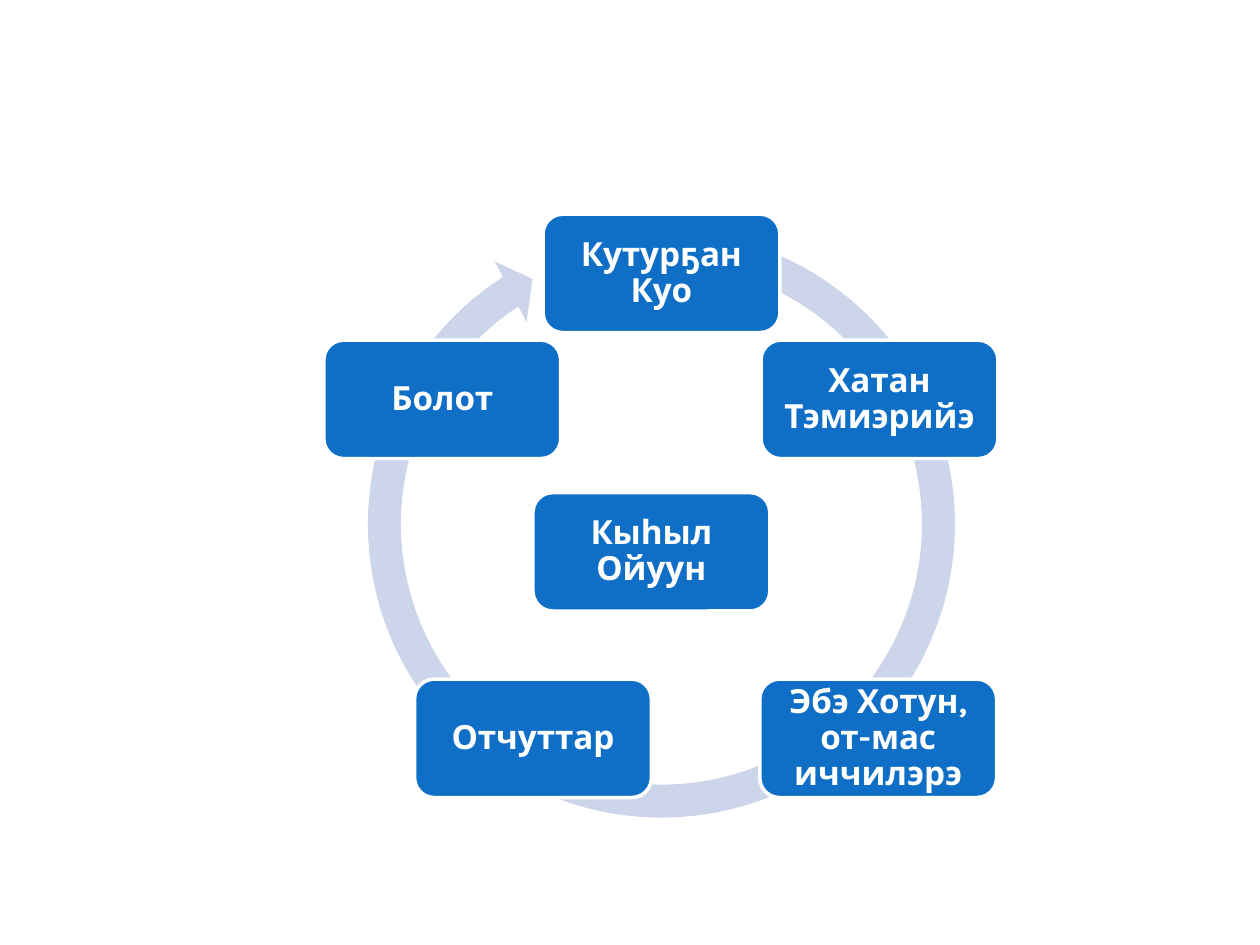
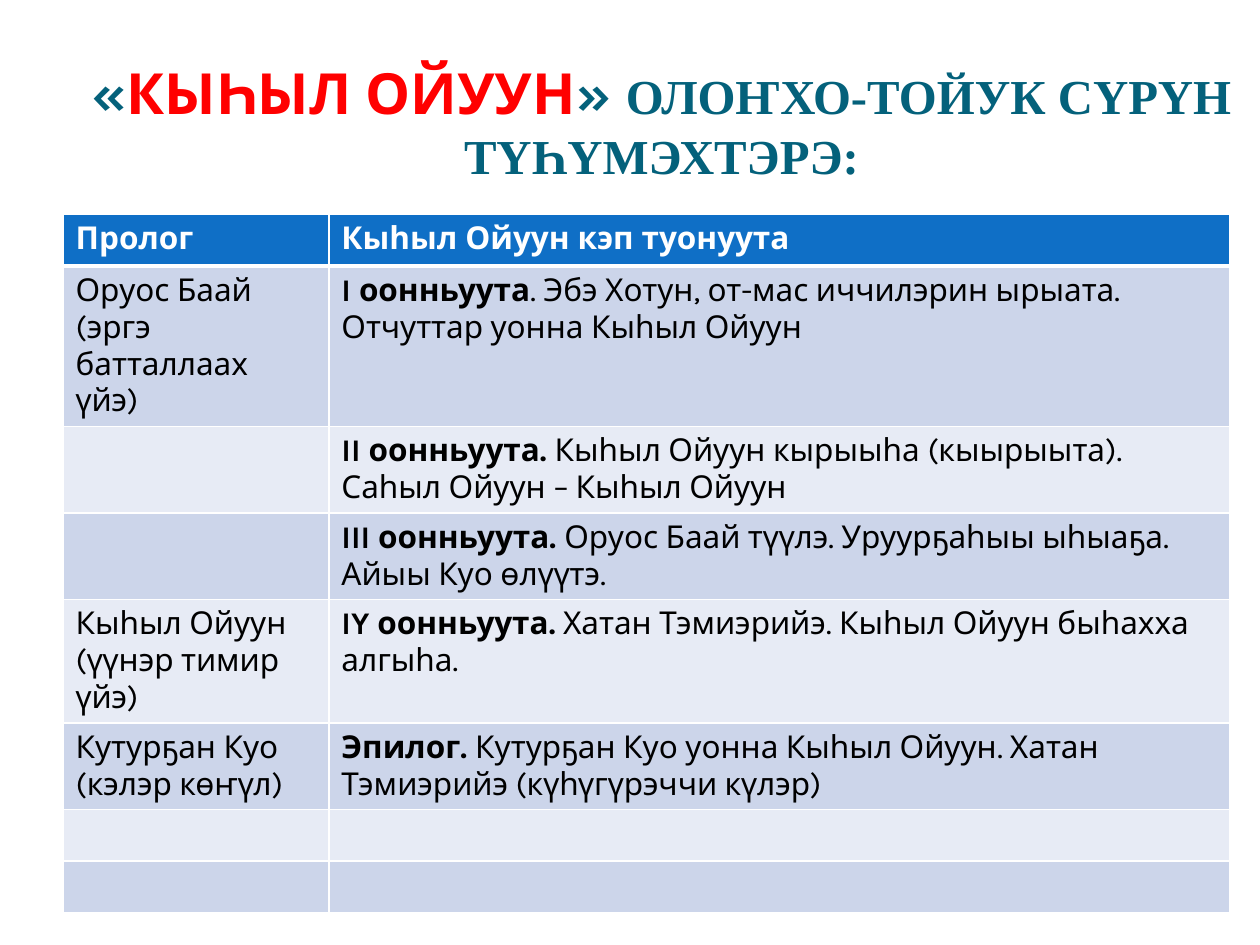
from pptx import Presentation
from pptx.dml.color import RGBColor
from pptx.enum.shapes import MSO_SHAPE
from pptx.enum.text import MSO_ANCHOR, MSO_AUTO_SIZE, PP_ALIGN
from pptx.oxml.xmlchemy import OxmlElement
from pptx.util import Inches, Pt

BLUE, PALE, LIGHT = "0F6FC6", "CCD5EA", "E7EBF5"
WHITE, BLACK, TEAL, RED = "FFFFFF", "000000", "04617B", "FF0000"

BOX_SIZE = (1.88, 0.94)
CHARACTERS = [
    ("Кутурҕан Куо", 4.31, 1.7),
    ("Хатан Тэмиэрийэ", 6.04, 2.7),
    ("Эбэ Хотун, от-мас иччилэрэ", 6.03, 5.39),
    ("Отчуттар", 3.29, 5.39),
    ("Кыһыл Ойуун", 4.23, 3.91),
    ("Болот", 2.57, 2.7),
]

COLUMN_WIDTHS = (2.11, 7.15)
ROW_HEIGHT = 0.41
ACTS = [
    (["Пролог"], "Кыһыл Ойуун кэп туонуута", ""),
    (["Оруос Баай (эргэ батталлаах үйэ)"], "I оонньуута",
     ". Эбэ Хотун, от-мас иччилэрин ырыата. Отчуттар уонна Кыһыл Ойуун"),
    ([], "II оонньуута. ",
     "Кыһыл Ойуун кырыыһа (кыырыыта). Саһыл Ойуун – Кыһыл Ойуун"),
    ([], "III оонньуута. ",
     "Оруос Баай түүлэ. Уруурҕаһыы ыһыаҕа. Айыы Куо өлүүтэ."),
    (["Кыһыл Ойуун (үүнэр тимир үйэ)"], "IY оонньуута.",
     " Хатан Тэмиэрийэ. Кыһыл Ойуун быһахха алгыһа."),
    (["Кутурҕан Куо", "(кэлэр көҥүл)"], "Эпилог. ",
     "Кутурҕан Куо уонна Кыһыл Ойуун. Хатан Тэмиэрийэ (күһүгүрэччи күлэр)"),
    ([], "", ""),
    ([], "", ""),
]


def color(value):
    return RGBColor.from_string(value)


def paint(target, value):
    target.fill.solid()
    target.fill.fore_color.rgb = color(value)


def add_span(para, text, size, value, bold=True, name="Karla"):
    span = para.add_run()
    span.text = text
    span.font.color.rgb = color(value)
    for attribute, setting in {"size": Pt(size), "bold": bold, "name": name}.items():
        setattr(span.font, attribute, setting)


def add_cycle_arrow(page):
    arrow = page.shapes.add_shape(
        MSO_SHAPE.CIRCULAR_ARROW, *map(Inches, (2.78, 1.69, 4.94, 4.94)))
    for index, value in enumerate((0.053, 3.126, 142.224, 171.304, 0.055)):
        arrow.adjustments[index] = value
    arrow.shadow.inherit = False
    paint(arrow, PALE)
    arrow.line.fill.background()


def add_character(page, text, left, top):
    box = page.shapes.add_shape(
        MSO_SHAPE.ROUNDED_RECTANGLE, *map(Inches, (left, top, *BOX_SIZE)))
    box.shadow.inherit = False
    paint(box, BLUE)
    box.line.color.rgb = color(WHITE)
    box.line.width = Pt(2)
    frame = box.text_frame
    layout = {"word_wrap": True, "vertical_anchor": MSO_ANCHOR.MIDDLE}
    layout.update({f"margin_{side}": Inches(0.12)
                   for side in ("left", "right", "top", "bottom")})
    for attribute, setting in layout.items():
        setattr(frame, attribute, setting)
    para = frame.paragraphs[0]
    para.alignment = PP_ALIGN.CENTER
    para.line_spacing = 0.9
    add_span(para, text, 19, WHITE)


def add_title(page):
    title = page.shapes.title
    place = {"left": 0.5, "top": 0.5, "width": 9.5, "height": 0.92}
    for attribute, length in place.items():
        setattr(title, attribute, Inches(length))
    frame = title.text_frame
    frame.auto_size = MSO_AUTO_SIZE.NONE
    frame.vertical_anchor = MSO_ANCHOR.MIDDLE
    para = frame.paragraphs[0]
    para.alignment = PP_ALIGN.CENTER
    for text, value in (("«", TEAL), ("КЫҺЫЛ ОЙУУН", RED), ("» ", TEAL)):
        add_span(para, text, 32.4, value)
    add_span(para, "ОЛОҤХО-ТОЙУК СҮРҮН ТҮҺҮМЭХТЭРЭ:", 27.9, TEAL,
             name="Times New Roman")


def add_borders(cell, top, bottom):
    properties = cell._tc.get_or_add_tcPr()
    for side, width in {"L": 1, "R": 1, "T": top, "B": bottom}.items():
        line = OxmlElement(f"a:ln{side}")
        line.set("w", str(Pt(width)))
        fill = OxmlElement("a:solidFill")
        shade = OxmlElement("a:srgbClr")
        shade.set("val", WHITE)
        fill.append(shade)
        line.append(fill)
        properties.append(line)


def fill_cell(cell, row, paragraphs):
    add_borders(cell, 3 if row == 1 else 1, 3 if row == 0 else 1)
    paint(cell, BLUE if row == 0 else PALE if row % 2 else LIGHT)
    frame = cell.text_frame
    for index, spans in enumerate(paragraphs):
        para = frame.add_paragraph() if index else frame.paragraphs[0]
        for text, bold in spans:
            if text:
                add_span(para, text, 18, BLACK if row else WHITE, bold)


def add_acts_table(page):
    table = page.shapes.add_table(
        len(ACTS), len(COLUMN_WIDTHS), Inches(0.5), Inches(1.7),
        Inches(sum(COLUMN_WIDTHS)), Inches(ROW_HEIGHT * len(ACTS))).table
    for column, width in zip(table.columns, COLUMN_WIDTHS):
        column.width = Inches(width)
    for row, (era, heading, summary) in enumerate(ACTS):
        table.rows[row].height = Inches(ROW_HEIGHT)
        fill_cell(table.cell(row, 0), row, [[(text, row == 0)] for text in era])
        fill_cell(table.cell(row, 1), row, [[(heading, True), (summary, False)]])


def main():
    deck = Presentation()
    deck.slide_width, deck.slide_height = Inches(10), Inches(7.5)

    cycle_page = deck.slides.add_slide(deck.slide_layouts[6])
    add_cycle_arrow(cycle_page)
    for character in CHARACTERS:
        add_character(cycle_page, *character)

    acts_page = deck.slides.add_slide(deck.slide_layouts[5])
    add_title(acts_page)
    add_acts_table(acts_page)

    deck.save("out.pptx")


if __name__ == "__main__":
    main()
